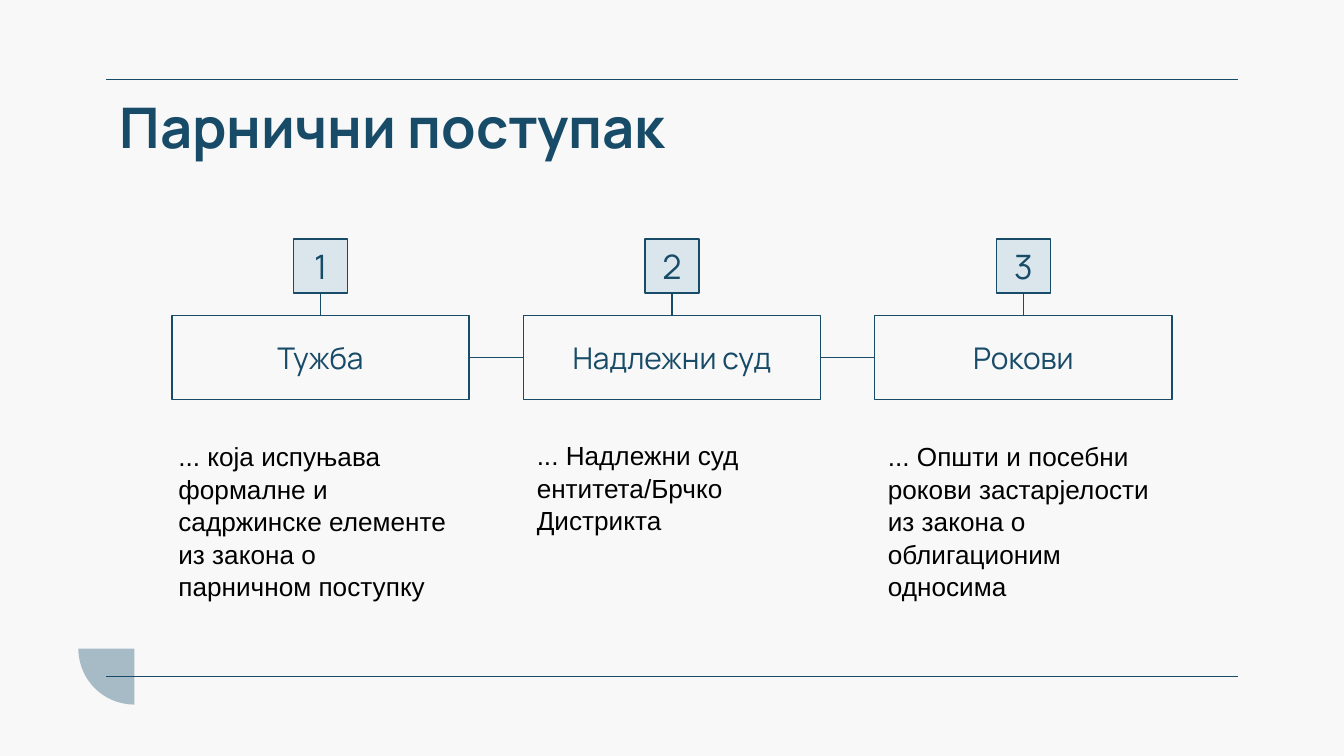
from math import cos, radians, sin

from lxml.etree import SubElement
from pptx import Presentation
from pptx.dml.color import RGBColor
from pptx.enum.shapes import MSO_CONNECTOR as Link, MSO_SHAPE as Shape
from pptx.enum.text import MSO_ANCHOR as Anchor, PP_ALIGN as Align
from pptx.oxml.ns import qn
from pptx.util import Pt

COLOURS = {"page": "F8F8F8", "ink": "174B67", "badge": "DAE6EC",
           "corner": "A7BBC7", "body": "000000"}


def colour(name):
    return RGBColor.from_string(COLOURS[name])


class SlideBuilder:
    """Holds the current slide and its style; all lengths are in points."""

    heading_font, body_font = "Manrope", "Arial"
    line_width = 0.75

    def __init__(self, slide):
        self.slide = slide
        self.shapes = slide.shapes
        slide.background.fill.solid()
        slide.background.fill.fore_color.rgb = colour("page")

    def fill_text(self, shape, text, ink, align=Align.LEFT, anchor=Anchor.TOP,
                  inset=7.2, spacing=1.0, **font_format):
        frame = shape.text_frame
        frame_format = {"word_wrap": True, "vertical_anchor": anchor,
                        "margin_left": Pt(7.2), "margin_right": Pt(7.2),
                        "margin_top": Pt(inset), "margin_bottom": Pt(inset)}
        for name, value in frame_format.items():
            setattr(frame, name, value)
        para = frame.paragraphs[0]
        para.alignment, para.line_spacing = align, spacing
        span = para.add_run()
        span.text = text
        for name, value in font_format.items():
            setattr(span.font, name, value)
        span.font.color.rgb = colour(ink)

    def text(self, left, top, width, height, text, ink, **text_format):
        box = self.shapes.add_textbox(Pt(left), Pt(top), Pt(width), Pt(height))
        self.fill_text(box, text, ink, **text_format)

    def box(self, left, top, width, height, text, size, fill=None):
        box = self.shapes.add_shape(Shape.RECTANGLE, Pt(left), Pt(top),
                                    Pt(width), Pt(height))
        box.shadow.inherit = False
        if fill:
            box.fill.solid()
            box.fill.fore_color.rgb = colour(fill)
        else:
            box.fill.background()
        box.line.color.rgb = colour("ink")
        box.line.width = Pt(self.line_width)
        self.fill_text(box, text, "ink", Align.CENTER, Anchor.MIDDLE,
                       name=self.heading_font, size=Pt(size))

    def line(self, x1, y1, x2, y2, kind=Link.STRAIGHT):
        line = self.shapes.add_connector(kind, Pt(x1), Pt(y1), Pt(x2), Pt(y2))
        line.line.color.rgb = colour("ink")
        line.line.width = Pt(self.line_width)
        SubElement(line._element.spPr, qn("a:effectLst"))

    def quarter_disc(self, x, y, radius):
        """Draw the lower left quarter of a disc centred on (x, y)."""
        arc = [(Pt(x + radius * cos(radians(angle))),
                Pt(y + radius * sin(radians(angle))))
               for angle in range(90, 181, 3)]
        outline = self.shapes.build_freeform(Pt(x), Pt(y))
        outline.add_line_segments(arc, close=True)
        disc = outline.convert_to_shape()
        disc.shadow.inherit = False
        disc.fill.solid()
        disc.fill.fore_color.rgb = colour("corner")
        disc.line.fill.background()


STEPS = [
    # heading, explanation, left, top, width and height of the explanation
    ("Тужба", "... која испуњава формалне и садржинске елементе "
     "из закона о парничном поступку", (88.5, 231.8, 162.7, 92)),
    ("Надлежни суд", "... Надлежни суд ентитета/Брчко Дистрикта",
     (280.5, 231.2, 159.2, 58)),
    ("Рокови", "... Општи и посебни рокови застарјелости "
     "из закона о облигационим односима", (468.6, 231.8, 159.2, 92)),
]
MIDDLE, PITCH = 360, 188.25
BOX_TOP, BOX_WIDTH, BOX_HEIGHT = 169, 159.2, 45.2
BADGE_TOP, BADGE = 128, 29
LINK_Y = 191.5


def main():
    deck = Presentation()
    deck.slide_width, deck.slide_height = Pt(720), Pt(405)
    page = SlideBuilder(deck.slides.add_slide(deck.slide_layouts[6]))

    page.quarter_disc(72, 347.5, 30)
    for y in (42.5, 362.5):
        page.line(57, y, 663, y)
    page.text(57, 42.5, 607, 41, "Парнични поступак", "ink",
              name=page.heading_font, size=Pt(30), bold=True)

    for index, (heading, explanation, area) in enumerate(STEPS):
        centre = MIDDLE + (index - 1) * PITCH
        left = centre - BOX_WIDTH / 2
        page.box(left, BOX_TOP, BOX_WIDTH, BOX_HEIGHT, heading, 16)
        page.box(centre - BADGE / 2, BADGE_TOP, BADGE, BADGE,
                 str(index + 1), 18, "badge")
        page.line(centre, BADGE_TOP + BADGE, centre, BOX_TOP)
        if index:
            page.line(left - PITCH + BOX_WIDTH, LINK_Y, left, LINK_Y, Link.ELBOW)
        page.text(*area, explanation, "body", inset=3.6, spacing=1.04,
                  name=page.body_font, size=Pt(14))

    deck.save("out.pptx")


if __name__ == "__main__":
    main()
